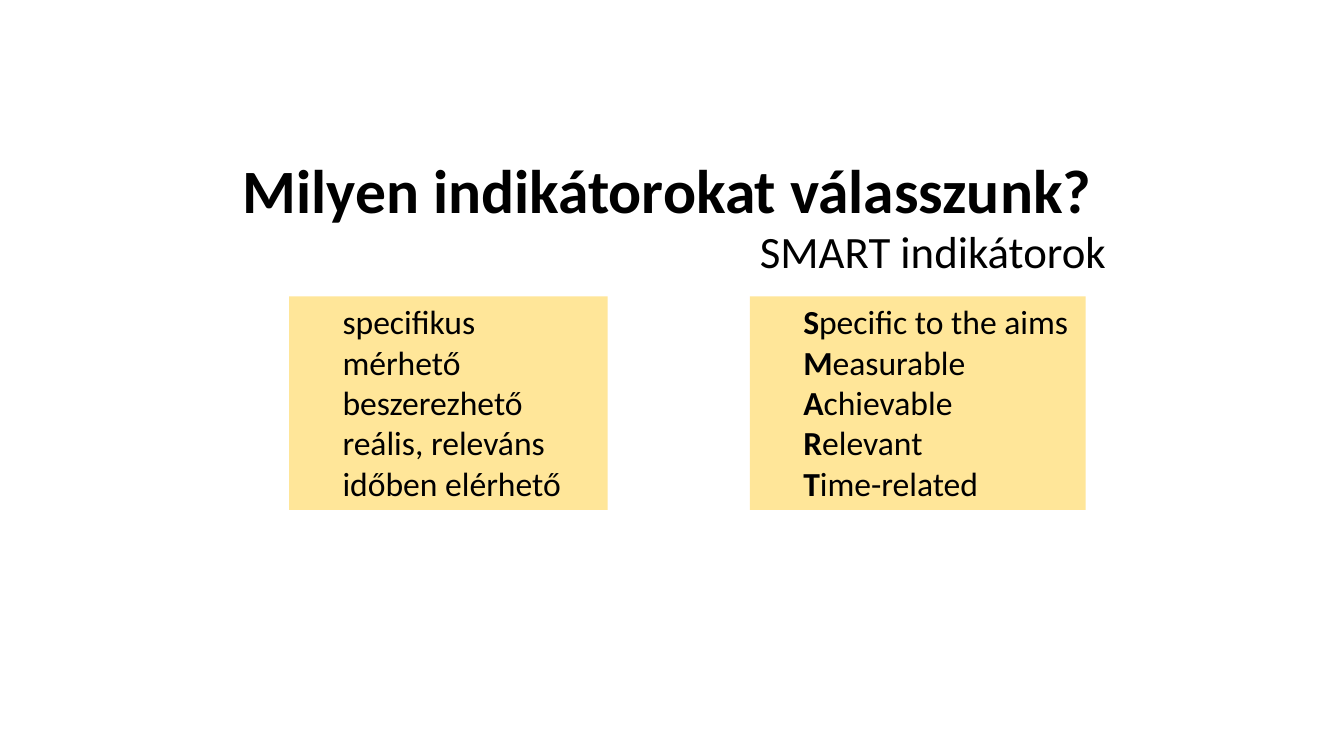
from pptx import Presentation
from pptx.dml.color import RGBColor
from pptx.enum import shapes, text
from pptx.util import Pt

BLACK = RGBColor(0x00, 0x00, 0x00)
PALE_YELLOW = RGBColor(0xFF, 0xE6, 0x99)

LIST_TOP, LIST_HEIGHT = 211.7, 152.6
LIST_INDENT = 31
ENGLISH_LEFT = 535.7


def write(box, lines, size, bold=False, initial_bold=False, indent=0, wrap=True):
    """Fill the box with one left-aligned paragraph per line."""
    frame = box.text_frame
    frame.word_wrap = wrap
    frame.auto_size = text.MSO_AUTO_SIZE.SHAPE_TO_FIT_TEXT
    frame.vertical_anchor = text.MSO_ANCHOR.TOP
    for number, line in enumerate(lines):
        para = frame.add_paragraph() if number else frame.paragraphs[0]
        para.alignment = text.PP_ALIGN.LEFT
        if indent:
            properties = para._p.get_or_add_pPr()
            properties.set("marL", str(Pt(indent)))
            properties.set("indent", "0")
        pieces = [(line[0], True), (line[1:], bold)] if initial_bold else [(line, bold)]
        for words, is_bold in pieces:
            span = para.add_run()
            span.text = words
            span.font.name = "Calibri"
            span.font.size = Pt(size)
            span.font.bold = is_bold
            span.font.color.rgb = BLACK


deck = Presentation()
deck.slide_width, deck.slide_height = Pt(960), Pt(540)
page = deck.slides.add_slide(deck.slide_layouts[6])

title = page.shapes.add_textbox(Pt(166.3), Pt(105.1), Pt(627.1), Pt(60.5))
write(title, ["Milyen indikátorokat válasszunk?"], 44, bold=True, wrap=False)

subtitle = page.shapes.add_textbox(Pt(ENGLISH_LEFT), Pt(156.2), Pt(264.2), Pt(46.1))
write(subtitle, ["SMART indikátorok"], 32, wrap=False)

hungarian = ["specifikus", "mérhető", "beszerezhető", "reális, releváns", "időben elérhető"]
english = ["Specific to the aims", "Measurable", "Achievable", "Relevant", "Time-related"]
for left, width, criteria, initial_bold in [
    (ENGLISH_LEFT, 239.8, english, True),
    (206.6, 227.5, hungarian, False),
]:
    box = page.shapes.add_shape(
        shapes.MSO_SHAPE.RECTANGLE, Pt(left), Pt(LIST_TOP), Pt(width), Pt(LIST_HEIGHT)
    )
    box.shadow.inherit = False
    box.fill.solid()
    box.fill.fore_color.rgb = PALE_YELLOW
    box.line.fill.background()
    write(box, criteria, 24, initial_bold=initial_bold, indent=LIST_INDENT)

deck.save("out.pptx")
